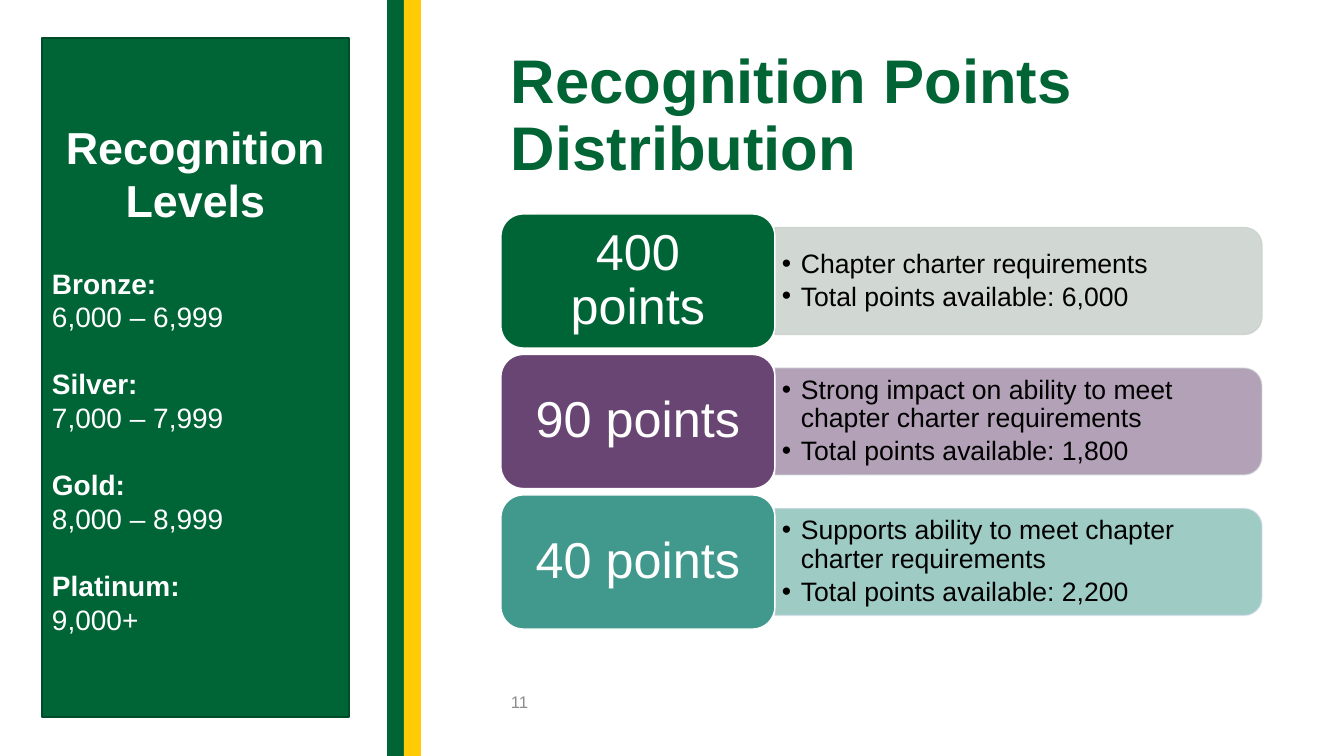
from lxml.etree import SubElement
from pptx import Presentation
from pptx.dml.color import RGBColor
from pptx.enum.shapes import MSO_SHAPE
from pptx.enum.text import MSO_ANCHOR, PP_ALIGN
from pptx.oxml.ns import qn
from pptx.util import Pt

PX = 914400 / 100.8
COLORS = {
    "green": "006435", "panel": "006536", "panel_edge": "004B28", "gold": "FFCB05",
    "purple": "694573", "teal": "40998C", "gray": "CCD3CE", "mint": "CFDEDA",
    "mist": "CCD5E6", "number": "8C8C8C", "white": "FFFFFF", "black": "000000",
}
TITLE = "Recognition Points Distribution"
PAGE = "11"
LEVELS_TITLE = "Recognition Levels"
LEVELS = [
    ("Bronze:", "6,000 – 6,999"),
    ("Silver:", "7,000 – 7,999"),
    ("Gold:", "8,000 – 8,999"),
    ("Platinum:", "9,000+"),
]
# label, label fill, bar fill, bar opacity in percent, bar edge, bullets
ROWS = [
    ("400 points", "panel", "gray", 90, "gray",
     ["Chapter charter requirements", "Total points available: 6,000"]),
    ("90 points", "purple", "purple", 50, "mint",
     ["Strong impact on ability to meet chapter charter requirements",
      "Total points available: 1,800"]),
    ("40 points", "teal", "teal", 50, "mist",
     ["Supports ability to meet chapter charter requirements",
      "Total points available: 2,200"]),
]
STRIPS = [(387, 21, "green"), (404, 17, "gold")]
LEFT = 501
ROW_TOP, ROW_PITCH = 214, 140.5
LABEL_W, LABEL_H = 274, 134
BAR_W, BAR_H = 487, 107
TEXT_W, TEXT_H = 482, 97


def emu(px):
    return round(px * PX)


def rgb(name):
    return RGBColor.from_string(COLORS[name])


def add_block(s, kind, box, fill, edge=None, alpha=100):
    sp = s.shapes.add_shape(kind, *map(emu, box))
    sp.shadow.inherit = False
    sp.fill.solid()
    sp.fill.fore_color.rgb = rgb(fill)
    if edge:
        sp.line.color.rgb = rgb(edge)
        sp.line.width = Pt(1)
    else:
        sp.line.fill.background()
    if alpha < 100:
        for color in sp._element.spPr.iter(qn("a:srgbClr")):
            SubElement(color, qn("a:alpha"), val=str(alpha * 1000))
    return sp


def add_box(s, box):
    return s.shapes.add_textbox(*map(emu, box))


def set_frame(sp, x=10, y=5):
    """Wrap and centre the text vertically, with side insets x and y."""
    tf = sp.text_frame
    tf.word_wrap = True
    tf.vertical_anchor = MSO_ANCHOR.MIDDLE
    tf.margin_left = tf.margin_right = emu(x)
    tf.margin_top = tf.margin_bottom = emu(y)
    return tf


def add_text(tf, text, size, color, bold=False, align=PP_ALIGN.LEFT,
             spacing=1.0, before=0, after=0, bullet=False):
    p = tf.paragraphs[0]
    if p.runs:
        p = tf.add_paragraph()
    p.alignment = align
    p.line_spacing = spacing
    p.space_before, p.space_after = Pt(before), Pt(after)
    if bullet:
        pPr = p._p.get_or_add_pPr()
        pPr.set("marL", str(emu(19)))
        pPr.set("indent", str(-emu(19)))
        SubElement(pPr, qn("a:buFont"), typeface="Arial")
        SubElement(pPr, qn("a:buChar"), char="•")
    r = p.add_run()
    r.text = text
    r.font.name, r.font.size, r.font.bold = "Arial", Pt(size), bold
    r.font.color.rgb = rgb(color)


def add_row(s, top, label, fill, bar_fill, alpha, edge, bullets):
    middle = top + LABEL_H / 2
    right = LEFT + LABEL_W
    # The bar is drawn upright, then turned about its centre.
    bar = add_block(s, MSO_SHAPE.ROUND_2_SAME_RECTANGLE,
                    (right + (BAR_W - BAR_H) / 2, middle - BAR_W / 2, BAR_H, BAR_W),
                    bar_fill, edge, alpha)
    bar.rotation = 90
    tf = set_frame(add_box(s, (right - 1, middle - TEXT_H / 2, TEXT_W, TEXT_H)), 8, 4)
    for bullet in bullets:
        add_text(tf, bullet, 19, "black", spacing=0.9, after=3, bullet=True)
    sp = add_block(s, MSO_SHAPE.ROUNDED_RECTANGLE, (LEFT, top, LABEL_W, LABEL_H),
                   fill, "white")
    add_text(set_frame(sp, 15, 7), label, 36, "white",
             align=PP_ALIGN.CENTER, spacing=0.9)


def main():
    prs = Presentation()
    prs.slide_width, prs.slide_height = emu(1344), emu(756)
    s = prs.slides.add_slide(prs.slide_layouts[6])

    for left, width, color in STRIPS:
        add_block(s, MSO_SHAPE.RECTANGLE, (left, 0, width, 756), color)

    title = set_frame(add_box(s, (LEFT, 44, 760, 146)))
    add_text(title, TITLE, 44, "green", bold=True, spacing=0.9)
    add_text(set_frame(add_box(s, (LEFT, 682, 302, 40))), PAGE, 12, "number")

    for i, row in enumerate(ROWS):
        add_row(s, ROW_TOP + i * ROW_PITCH, *row)

    panel = add_block(s, MSO_SHAPE.RECTANGLE, (42, 38, 307, 679), "panel", "panel_edge")
    tf = set_frame(panel)
    add_text(tf, LEVELS_TITLE, 32, "white", bold=True, align=PP_ALIGN.CENTER)
    for i, (level, points) in enumerate(LEVELS):
        add_text(tf, level, 20, "white", bold=True, before=24 if i else 28)
        add_text(tf, points, 20, "white")

    prs.save("out.pptx")


if __name__ == "__main__":
    main()
